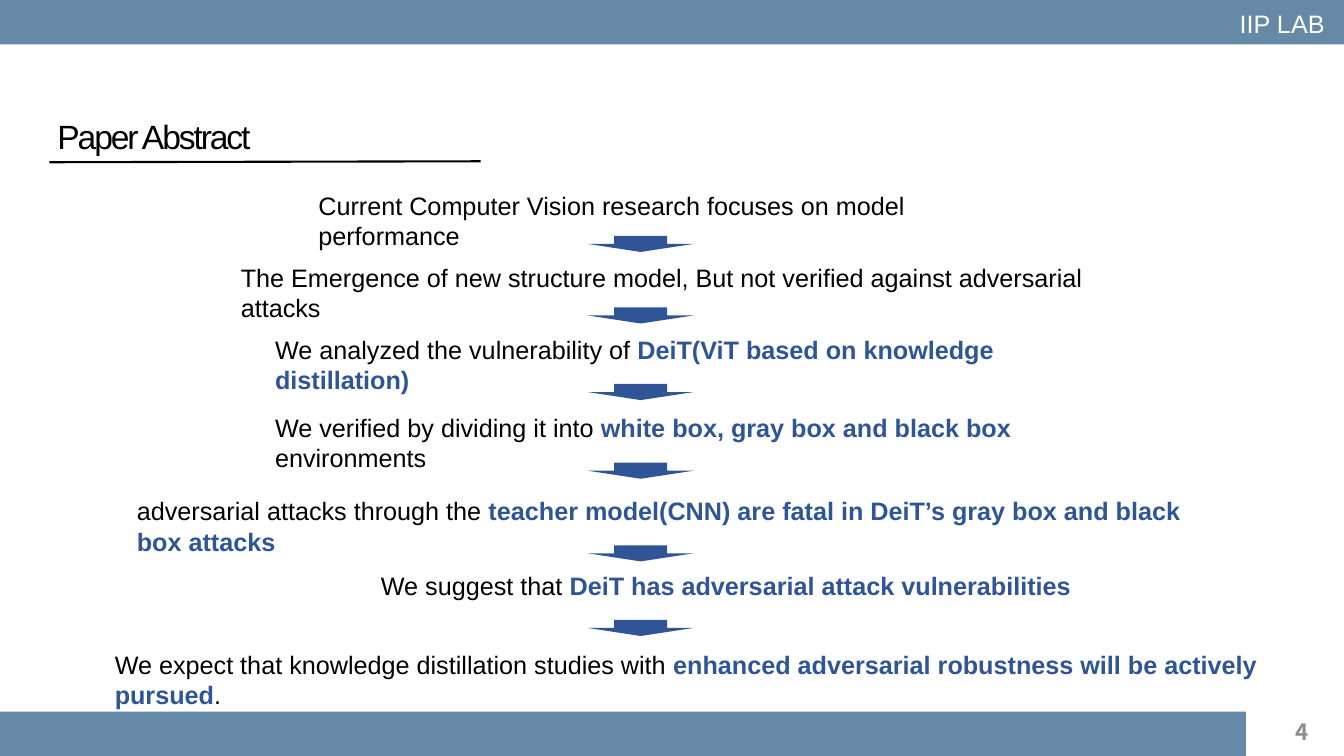
from dataclasses import dataclass
from pptx import Presentation
from pptx.dml.color import RGBColor
from pptx.enum import shapes, text
from pptx.oxml import ns
from pptx.util import Pt
from lxml import etree


@dataclass(frozen=True)
class Theme:
    bar: str = "6589A7"
    accent: str = "2F5597"
    ink: str = "000000"
    paper: str = "FFFFFF"
    muted: str = "8C8C8C"
    font: str = "Arial"
    number_font: str = "Noto Sans CJK KR"
    title_size: int = 24
    body_size: int = 18
    number_size: int = 16


THEME = Theme()
FIT = text.MSO_AUTO_SIZE.SHAPE_TO_FIT_TEXT

# Left offset, top offset, width, drop to the arrow below, wording (*emphasised*)
STEPS = [
    (145.4, 0, 503.3, 36,
     "Current Computer Vision research focuses on model performance"),
    (90, 51.1, 644.4, 36,
     "The Emergence of new structure model, But not verified against adversarial attacks"),
    (114.5, 102.9, 607.7, 38.9,
     "We analyzed the vulnerability of *DeiT(ViT based on knowledge distillation)*"),
    (114.5, 158.4, 607.7, 39.6,
     "We verified by dividing it into *white box, gray box and black box *environments"),
    (15.8, 218.1, 784.8, 38.9,
     "adversarial attacks through the *teacher model(CNN) are fatal in DeiT’s gray box and black box attacks*"),
    (190.1, 271.4, 603.4, 38.9,
     "We suggest that *DeiT has adversarial attack vulnerabilities*"),
    (0, 327.6, 831.6, None,
     "We expect that knowledge distillation studies with "
     "*enhanced adversarial robustness will be actively pursued*."),
]


def apply(target, formats):
    for name, value in formats.items():
        setattr(target, name, value)


def points(*lengths):
    return [Pt(length) for length in lengths]


def add_words(paragraph, words, color, size=THEME.body_size, font=THEME.font, bold=False):
    run = paragraph.add_run()
    run.text = words
    apply(run.font, {"size": Pt(size), "name": font, "bold": bold})
    run.font.color.rgb = RGBColor.from_string(color)
    return run


def add_label(slide, box, **frame_formats):
    frame = slide.shapes.add_textbox(*points(*box)).text_frame
    apply(frame, {"word_wrap": True, "auto_size": FIT, **frame_formats})
    return frame.paragraphs[0]


def add_solid(slide, preset, box, color):
    solid = slide.shapes.add_shape(preset, *points(*box))
    solid.shadow.inherit = False
    solid.fill.solid()
    solid.fill.fore_color.rgb = RGBColor.from_string(color)
    solid.line.fill.background()


def add_header(slide, box):
    left, top, width, height = box
    add_solid(slide, shapes.MSO_SHAPE.RECTANGLE, box, THEME.bar)
    lab = add_label(slide, (left + width - 81.6, top + 2.2, 75.6, 28.8), word_wrap=False)
    add_words(lab, "IIP LAB", THEME.paper)


def add_footer(slide, box):
    left, top, width, height = box
    add_solid(slide, shapes.MSO_SHAPE.RECTANGLE, (left, top, width - 70.1, height), THEME.bar)
    number = add_label(slide, (left + width - 53.5, top, 35.3, 28.8),
                       auto_size=text.MSO_AUTO_SIZE.NONE,
                       vertical_anchor=text.MSO_ANCHOR.MIDDLE)
    number.alignment = text.PP_ALIGN.RIGHT
    add_words(number, "4", THEME.muted, THEME.number_size, THEME.number_font, True)


def add_heading(slide, box):
    left, top, width, height = box
    # Title
    heading = slide.shapes.title
    apply(heading, dict(zip(("left", "top", "width", "height"), points(*box))))
    apply(heading.text_frame, {"word_wrap": True, "auto_size": FIT,
                               "vertical_anchor": text.MSO_ANCHOR.TOP})
    paragraph = heading.text_frame.paragraphs[0]
    paragraph.alignment = text.PP_ALIGN.LEFT
    title = add_words(paragraph, "Paper Abstract", THEME.ink, THEME.title_size)
    title.font._element.set("spc", "-150")
    # Rule under the title
    rule = slide.shapes.add_connector(
        shapes.MSO_CONNECTOR.STRAIGHT,
        *points(left + 1.5, top + 36.7, left + 309.6, top + 36))
    rule.line.width = Pt(1.5)
    rule.line.color.rgb = RGBColor.from_string(THEME.ink)
    etree.SubElement(rule._element.spPr, ns.qn("a:effectLst"))


def add_argument(slide, box):
    left, top, width, height = box
    for step_left, step_top, step_width, drop, wording in STEPS:
        step = add_label(slide, (left + step_left, top + step_top, step_width, 28.8))
        for index, words in enumerate(wording.split("*")):
            strong = index % 2 == 1
            if words:
                add_words(step, words, THEME.accent if strong else THEME.ink, bold=strong)
        if drop:
            add_solid(slide, shapes.MSO_SHAPE.DOWN_ARROW,
                      (left + 344.9, top + step_top + drop, 75.6, 11.5), THEME.accent)


def main():
    deck = Presentation()
    apply(deck, {"slide_width": Pt(960), "slide_height": Pt(540)})
    slide = deck.slides.add_slide(deck.slide_layouts.get_by_name("Title Only"))
    add_footer(slide, (0, 508.3, 960, 31.7))
    add_header(slide, (0, 0, 960, 31.7))
    add_heading(slide, (33.8, 79.2, 540, 36))
    add_argument(slide, (74.9, 132.5, 831.6, 356.4))
    deck.save("out.pptx")


if __name__ == "__main__":
    main()
